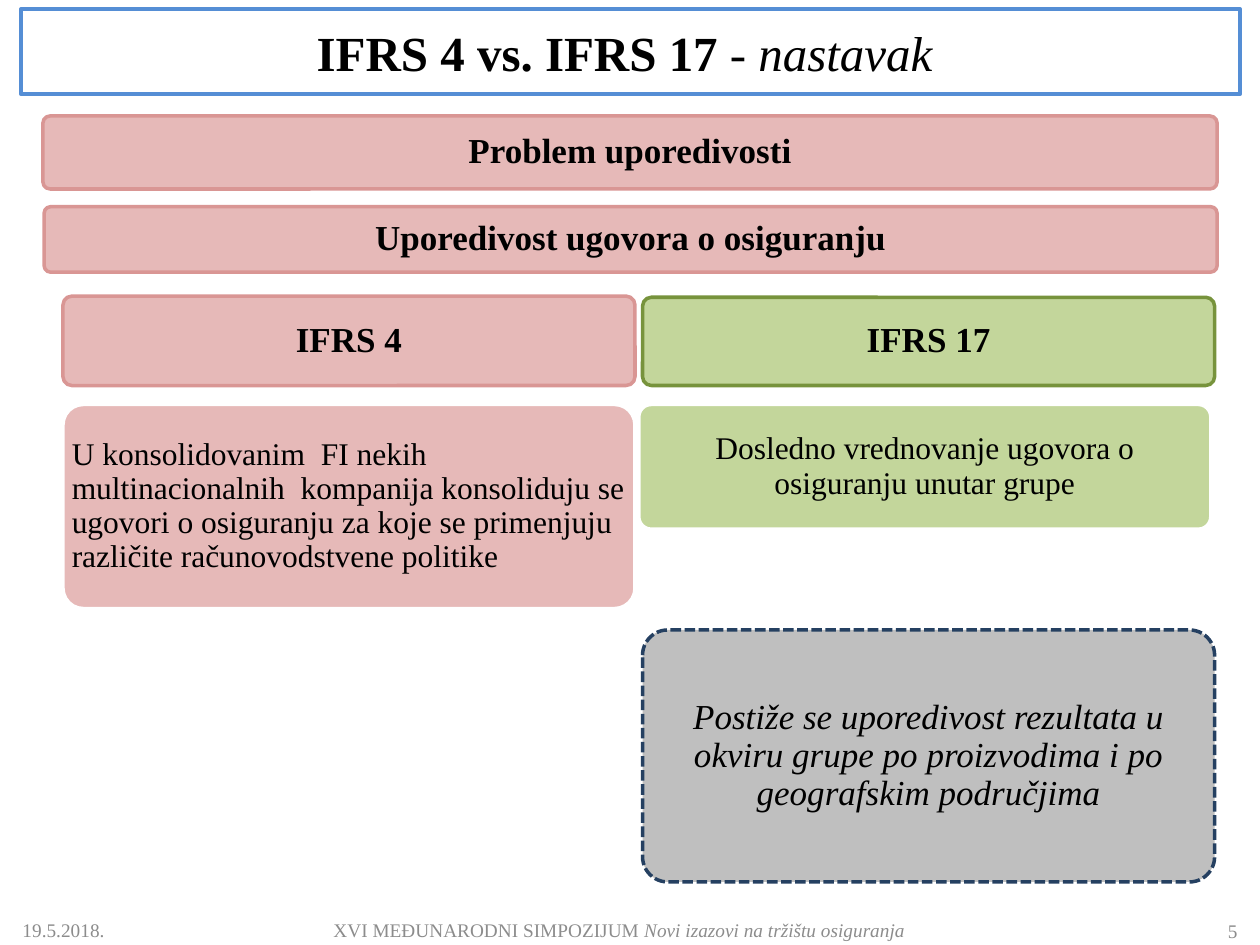
from pptx import Presentation
from pptx.dml.color import RGBColor
from pptx.enum.dml import MSO_LINE
from pptx.enum.shapes import MSO_SHAPE
from pptx.enum.text import MSO_ANCHOR, PP_ALIGN
from pptx.util import Inches, Pt

PINK, ROSE = "E6B9B8", "D99694"
GREEN, OLIVE = "C3D69B", "77933C"
GRAY, NAVY = "BFBFBF", "254061"
BLUE, WHITE, BLACK, MUTED = "558ED5", "FFFFFF", "000000", "8C8C8C"
CORNER = 0.1
COLUMN_WIDTH = 4.54
LEFT_COLUMN, RIGHT_COLUMN = 0.5, 5.1


def color(code):
    """Turn a hex string into a colour."""
    return RGBColor.from_string(code)


def write(para, text, size=20, ink=BLACK, bold=False, italic=False, font="Times New Roman"):
    """Add one formatted span of text to a paragraph."""
    span = para.add_run()
    span.text = text
    span.font.name = font
    span.font.size = Pt(size)
    span.font.bold = bold
    span.font.italic = italic
    span.font.color.rgb = color(ink)


def prepare(box, align):
    """Set up wrapping and anchoring, and return the first paragraph."""
    frame = box.text_frame
    frame.word_wrap = True
    frame.vertical_anchor = MSO_ANCHOR.MIDDLE
    para = frame.paragraphs[0]
    para.alignment = align
    return para


class ComparisonSlide:
    """Holds the page and draws its title, cards and footer."""

    def __init__(self, page):
        """Keep the page to draw on."""
        self.page = page

    def shape(self, kind, place, line, width):
        """Add an outlined shape without shadow."""
        box = self.page.shapes.add_shape(kind, *map(Inches, place))
        box.shadow.inherit = False
        box.line.color.rgb = color(line)
        box.line.width = Pt(width)
        return box

    def title(self, place, text, note):
        """Add the framed title with an italic note."""
        box = self.shape(MSO_SHAPE.RECTANGLE, place, BLUE, 2.25)
        box.fill.background()
        para = prepare(box, PP_ALIGN.CENTER)
        write(para, text, size=28, bold=True)
        write(para, note, size=28, italic=True)

    def card(self, place, text, fill, line, align=PP_ALIGN.CENTER, dashed=False, inset=0.08, **style):
        """Add a rounded card, its margins reduced by the corner inset."""
        box = self.shape(MSO_SHAPE.ROUNDED_RECTANGLE, place, line, 2)
        box.adjustments[0] = CORNER
        box.fill.solid()
        box.fill.fore_color.rgb = color(fill)
        if dashed:
            box.line.dash_style = MSO_LINE.SQUARE_DOT
        para = prepare(box, align)
        para.line_spacing = 0.9
        frame = box.text_frame
        margin = Inches(inset - 0.29 * CORNER * place[3])
        frame.margin_left = frame.margin_right = margin
        frame.margin_top = frame.margin_bottom = margin
        write(para, text, **style)

    def footer(self, place, align, text, note=""):
        """Add a footer text with an optional italic ending."""
        box = self.page.shapes.add_textbox(*map(Inches, place))
        para = prepare(box, align)
        write(para, text, size=11, ink=MUTED)
        if note:
            write(para, note, size=11, ink=MUTED, italic=True)


def main():
    """Build and save the deck."""
    deck = Presentation()
    deck.slide_width, deck.slide_height = Inches(10), Inches(7.5)
    slide = ComparisonSlide(deck.slides.add_slide(deck.slide_layouts[6]))

    slide.footer((0.08, 7.18, 1.08, 0.4), PP_ALIGN.LEFT, "19.5.2018.")
    slide.footer((2.25, 7.18, 5.33, 0.4), PP_ALIGN.CENTER,
                 "XVI MEĐUNARODNI SIMPOZIJUM ", "Novi izazovi na tržištu osiguranja")
    slide.footer((8.75, 7.19, 1.17, 0.4), PP_ALIGN.RIGHT, "5")
    slide.title((0.17, 0.07, 9.67, 0.68), "IFRS 4 vs. IFRS 17 ", "- nastavak ")

    headings = [
        ((0.34, 0.92, 9.32, 0.58), "Problem uporedivosti", PINK, ROSE),
        ((0.35, 1.64, 9.31, 0.52), "Uporedivost ugovora o osiguranju", PINK, ROSE),
        ((LEFT_COLUMN, 2.35, COLUMN_WIDTH, 0.71), "IFRS 4", PINK, ROSE),
        ((RIGHT_COLUMN, 2.36, COLUMN_WIDTH, 0.7), "IFRS 17", GREEN, OLIVE),
    ]
    for place, text, fill, line in headings:
        slide.card(place, text, fill, line, bold=True)

    slide.card((LEFT_COLUMN, 3.21, COLUMN_WIDTH, 1.62),
               "U konsolidovanim  FI nekih multinacionalnih  kompanija konsoliduju se "
               "ugovori o osiguranju za koje se primenjuju različite računovodstvene politike",
               PINK, WHITE, align=PP_ALIGN.LEFT, inset=0.07, size=18)
    slide.card((5.07, 3.21, COLUMN_WIDTH, 0.99),
               "Dosledno vrednovanje ugovora o osiguranju unutar grupe",
               GREEN, WHITE, inset=0.07, size=18)
    slide.card((RIGHT_COLUMN, 5, COLUMN_WIDTH, 2),
               "Postiže se uporedivost rezultata u okviru grupe po proizvodima "
               "i po geografskim područjima",
               GRAY, NAVY, dashed=True, italic=True)

    deck.save("out.pptx")


if __name__ == "__main__":
    main()
